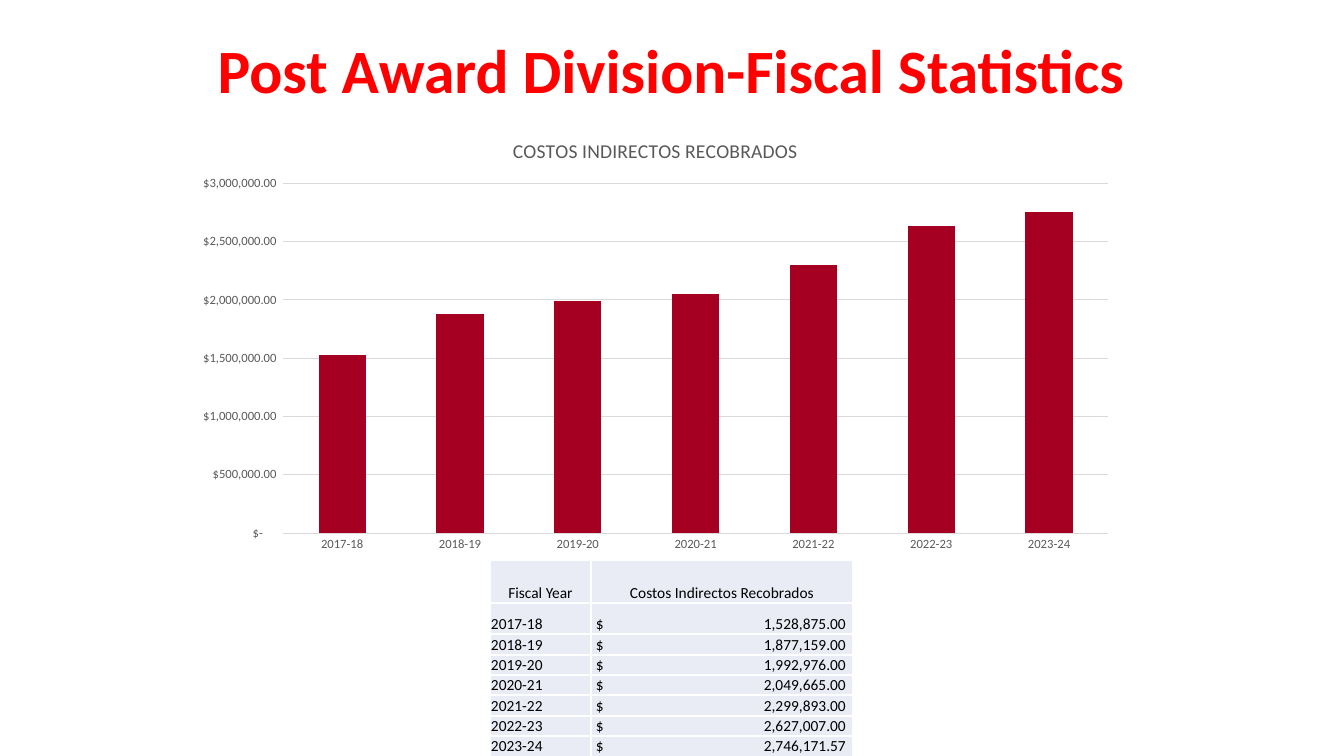
from lxml.etree import SubElement as Sub
from pptx import Presentation as Deck
from pptx.chart.data import CategoryChartData as Data
from pptx.dml.color import RGBColor as Rgb
from pptx.enum.chart import XL_CHART_TYPE as Kind, XL_TICK_MARK as Tick
from pptx.enum.text import MSO_ANCHOR as Anchor, PP_ALIGN as Align
from pptx.oxml.ns import qn
from pptx.util import Emu, Pt

HUES = {"title": "FF0000", "bar": "A50021", "grid": "D9D9D9",
        "label": "595959", "text": "000000", "cell": "E9EBF5", "edge": "FFFFFF"}
FACE = "Calibri"
COSTS = {"2017-18": 1528875, "2018-19": 1877159, "2019-20": 1992976,
         "2020-21": 2049665, "2021-22": 2299893, "2022-23": 2627007,
         "2023-24": 2746171.57}
MONEY = '_("$"* #,##0.00_);_("$"* \\(#,##0.00\\);_("$"* "-"??_);_(@_)'


def px(num):
    return Emu(round(num * 914400 / 100.8))


def hue(name):
    return Rgb.from_string(HUES[name])


def put(item, **vals):
    for key, val in vals.items():
        setattr(item, key, val)


def style(font, size, name, bold=False):
    put(font, name=FACE, size=Pt(size), bold=bold)
    font.color.rgb = hue(name)


def add_title(slide, text):
    title = slide.shapes.title
    put(title, left=px(92), top=px(1), width=px(1159), height=px(146))
    put(title.text_frame, text=text, vertical_anchor=Anchor.MIDDLE, word_wrap=True)
    line = title.text_frame.paragraphs[0]
    put(line, alignment=Align.CENTER, line_spacing=0.9)
    style(line.runs[0].font, 44, "title", True)


def set_plot(chart, **parts):
    area = chart._chartSpace.chart.plotArea
    for old in area.findall(qn("c:layout")):
        area.remove(old)
    lay = area.makeelement(qn("c:layout"), {})
    area.insert(0, lay)
    box = Sub(lay, qn("c:manualLayout"))
    for tag, val in {"layoutTarget": "inner", "xMode": "edge", "yMode": "edge", **parts}.items():
        Sub(box, qn("c:" + tag)).set("val", str(val))


def add_bars(slide):
    data = Data(number_format=MONEY)
    data.categories = list(COSTS)
    data.add_series("Series 1", [int(round(cost, -4)) for cost in COSTS.values()])
    chart = slide.shapes.add_chart(Kind.COLUMN_CLUSTERED, px(179), px(119),
                                   px(948), px(443), data).chart
    style(chart.font, 10, "text")
    put(chart, has_legend=False, has_title=True)
    head = chart.chart_title.text_frame
    head.text = " COSTOS INDIRECTOS RECOBRADOS"
    style(head.paragraphs[0].runs[0].font, 14, "label")
    plot = chart.plots[0]
    put(plot, gap_width=150, vary_by_categories=False)
    fill = plot.series[0].format.fill
    fill.solid()
    fill.fore_color.rgb = hue("bar")
    for axis in (chart.category_axis, chart.value_axis):
        put(axis, major_tick_mark=Tick.NONE, minor_tick_mark=Tick.NONE)
        axis.format.line.fill.background()
        style(axis.tick_labels.font, 9, "label")
    axis = chart.value_axis
    put(axis, minimum_scale=0, maximum_scale=3000000, major_unit=500000,
        has_major_gridlines=True)
    put(axis.tick_labels, number_format=MONEY, number_format_is_linked=False)
    line = axis.major_gridlines.format.line
    line.width = Pt(0.75)
    line.color.rgb = hue("grid")
    set_plot(chart, x=0.11, y=0.145, w=0.87, h=0.79)


def add_edges(cell):
    props = cell._tc.get_or_add_tcPr()
    for spot, side in enumerate(("lnL", "lnR", "lnT", "lnB")):
        line = props.makeelement(qn("a:" + side), {"w": str(Pt(1))})
        props.insert(spot, line)
        Sub(Sub(line, qn("a:solidFill")), qn("a:srgbClr")).set("val", HUES["edge"])


def add_tab(line, pos):
    tabs = Sub(line._p.get_or_add_pPr(), qn("a:tabLst"))
    Sub(tabs, qn("a:tab"), {"pos": str(px(pos)), "algn": "r"})


def fill_cell(cell, text, align, inset):
    put(cell, text=text, vertical_anchor=Anchor.BOTTOM, margin_left=px(inset),
        margin_right=px(1), margin_top=px(1), margin_bottom=px(0))
    cell.fill.solid()
    cell.fill.fore_color.rgb = hue("cell")
    add_edges(cell)
    line = cell.text_frame.paragraphs[0]
    line.alignment = align
    style(line.runs[0].font, 11, "text")
    if "\t" in text:
        add_tab(line, 250)


def add_grid(slide):
    rows = [("Fiscal Year", "Costos Indirectos Recobrados")]
    rows += [(year, f"$\t{cost:,.2f}") for year, cost in COSTS.items()]
    highs = [43, 31] + [21, 20, 20] * 2
    table = slide.shapes.add_table(len(rows), 2, px(490), px(560),
                                   px(363), px(sum(highs))).table
    put(table, first_row=False, horz_banding=False)
    for col, wide in zip(table.columns, (101, 262)):
        col.width = px(wide)
    for r, row in enumerate(rows):
        table.rows[r].height = px(highs[r])
        for c, text in enumerate(row):
            align = Align.LEFT if r else Align.CENTER
            fill_cell(table.cell(r, c), text, align, 5 if r and c else 1)


def main():
    deck = Deck()
    put(deck, slide_width=px(1344), slide_height=px(756))
    slide = deck.slides.add_slide(deck.slide_layouts[5])
    add_title(slide, "Post Award Division-Fiscal Statistics")
    add_grid(slide)
    add_bars(slide)
    deck.save("out.pptx")


if __name__ == "__main__":
    main()
